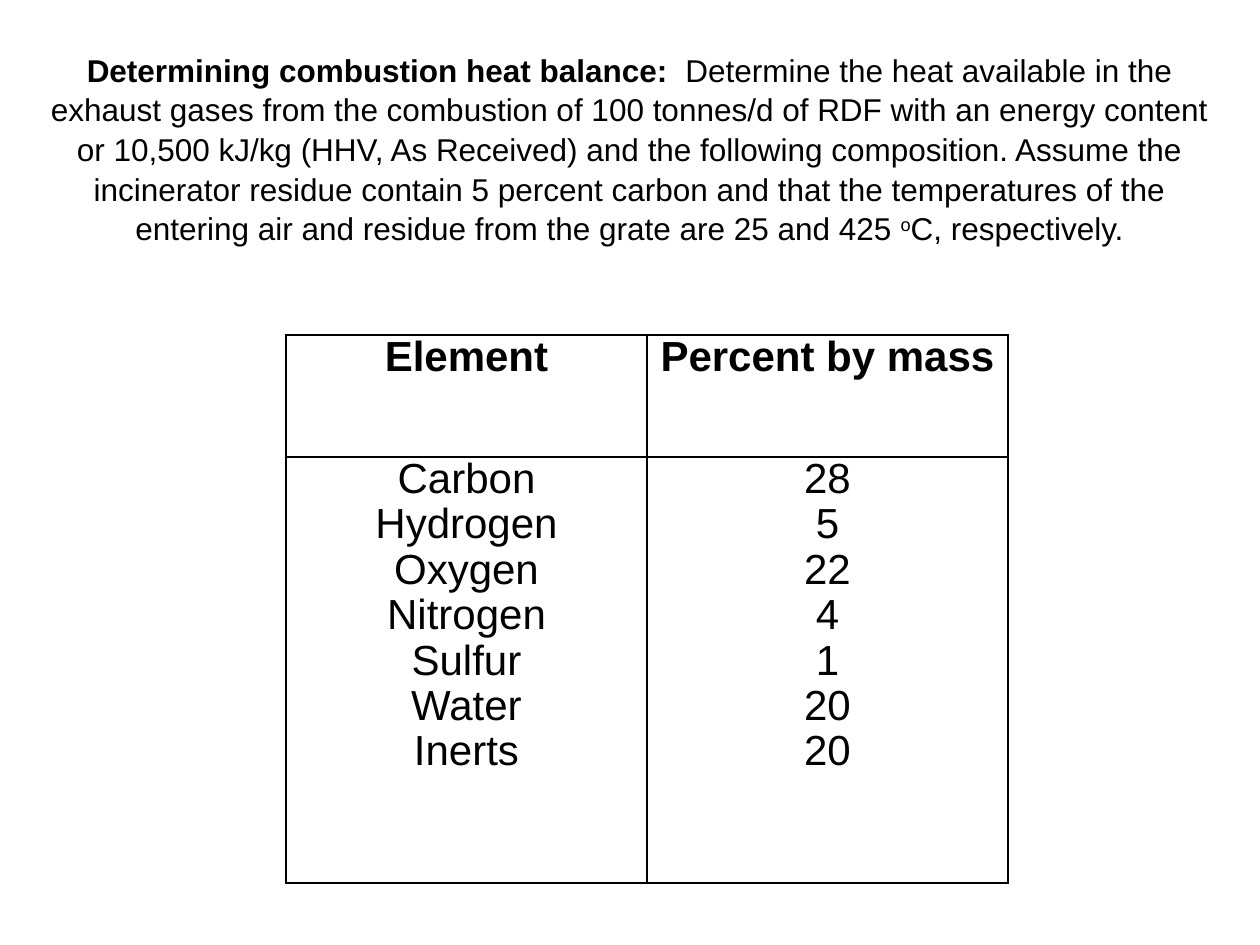
from lxml.etree import SubElement
from pptx import Presentation
from pptx.dml.color import RGBColor
from pptx.enum.text import MSO_ANCHOR, PP_ALIGN
from pptx.oxml.ns import qn
from pptx.util import Pt

PX = 914400 // 126
BLACK = "000000"

# Content: (text, bold, superscript)
TITLE = [
    ("Determining combustion heat balance:  ", True, False),
    ("Determine the heat available in the exhaust gases from the combustion of "
     "100 tonnes/d of RDF with an energy content or 10,500 kJ/kg (HHV, As Received) "
     "and the following composition. Assume the incinerator residue contain 5 percent "
     "carbon and that the temperatures of the entering air and residue from the grate "
     "are 25 and 425 ", False, False),
    ("o", False, True),
    ("C, respectively.", False, False),
]
HEADERS = ["Element", "Percent by mass"]
COMPOSITION = [("Carbon", 28), ("Hydrogen", 5), ("Oxygen", 22), ("Nitrogen", 4),
               ("Sulfur", 1), ("Water", 20), ("Inerts", 20)]

TITLE_BOX = (29, 69, 1201, 158)
TABLE_LEFT, TABLE_TOP = 286, 335
COL_WIDTH, ROW_HEIGHTS = 361, (122, 426)


def px(n):
    return n * PX


def rgb(value):
    return RGBColor.from_string(value)


def style(r, size, bold):
    r.font.name = "Arial"
    r.font.size = Pt(size)
    r.font.bold = bold
    r.font.color.rgb = rgb(BLACK)


def add_borders(cell):
    tc_pr = cell._tc.get_or_add_tcPr()
    for side in ("lnL", "lnR", "lnT", "lnB"):
        ln = SubElement(tc_pr, qn("a:" + side), w=str(Pt(1)))
        fill = SubElement(ln, qn("a:solidFill"))
        SubElement(fill, qn("a:srgbClr"), val=BLACK)


def fill_cell(cell, lines, bold):
    cell.margin_left = cell.margin_right = px(9)
    cell.margin_top = cell.margin_bottom = 0
    cell.text_frame.text = "\n".join(lines)
    for p in cell.text_frame.paragraphs:
        p.alignment = PP_ALIGN.CENTER
        p.line_spacing = 0.97
        for r in p.runs:
            style(r, 24, bold)
    add_borders(cell)
    cell.fill.background()


prs = Presentation()
prs.slide_width, prs.slide_height = px(1260), px(945)
s = prs.slides.add_slide(prs.slide_layouts[6])

# Problem statement
tf = s.shapes.add_textbox(*map(px, TITLE_BOX)).text_frame
tf.word_wrap = True
tf.vertical_anchor = MSO_ANCHOR.MIDDLE
p = tf.paragraphs[0]
p.alignment = PP_ALIGN.CENTER
p.line_spacing = 1.05
for text, bold, superscript in TITLE:
    r = p.add_run()
    r.text = text
    style(r, 18, bold)
    if superscript:
        r._r.get_or_add_rPr().set("baseline", "30000")

# Composition table: a header row above one row of stacked values
table = s.shapes.add_table(2, 2, px(TABLE_LEFT), px(TABLE_TOP),
                           px(2 * COL_WIDTH), px(sum(ROW_HEIGHTS))).table
table.first_row = table.horz_banding = False
for row, height in zip(table.rows, ROW_HEIGHTS):
    row.height = px(height)
for col, values in enumerate(zip(*COMPOSITION)):
    table.columns[col].width = px(COL_WIDTH)
    fill_cell(table.cell(0, col), [HEADERS[col]], True)
    fill_cell(table.cell(1, col), map(str, values), False)

prs.save("out.pptx")
